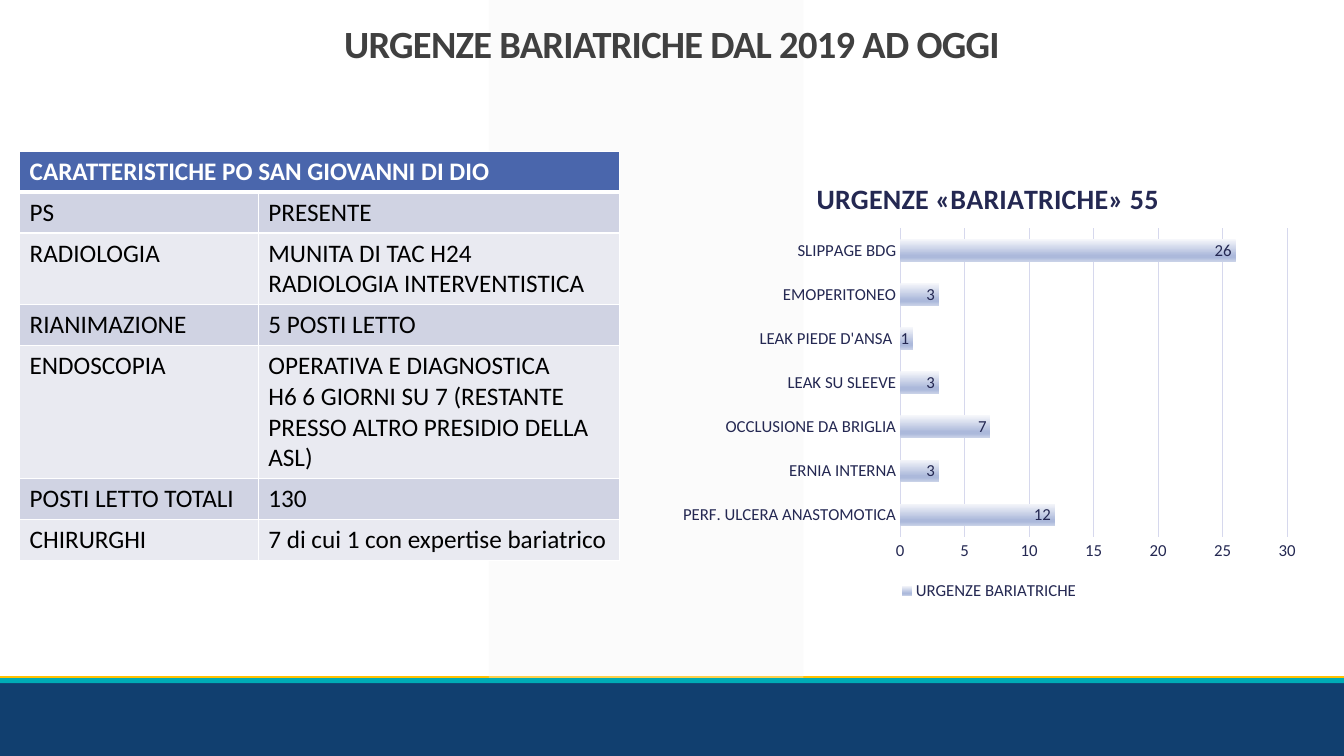
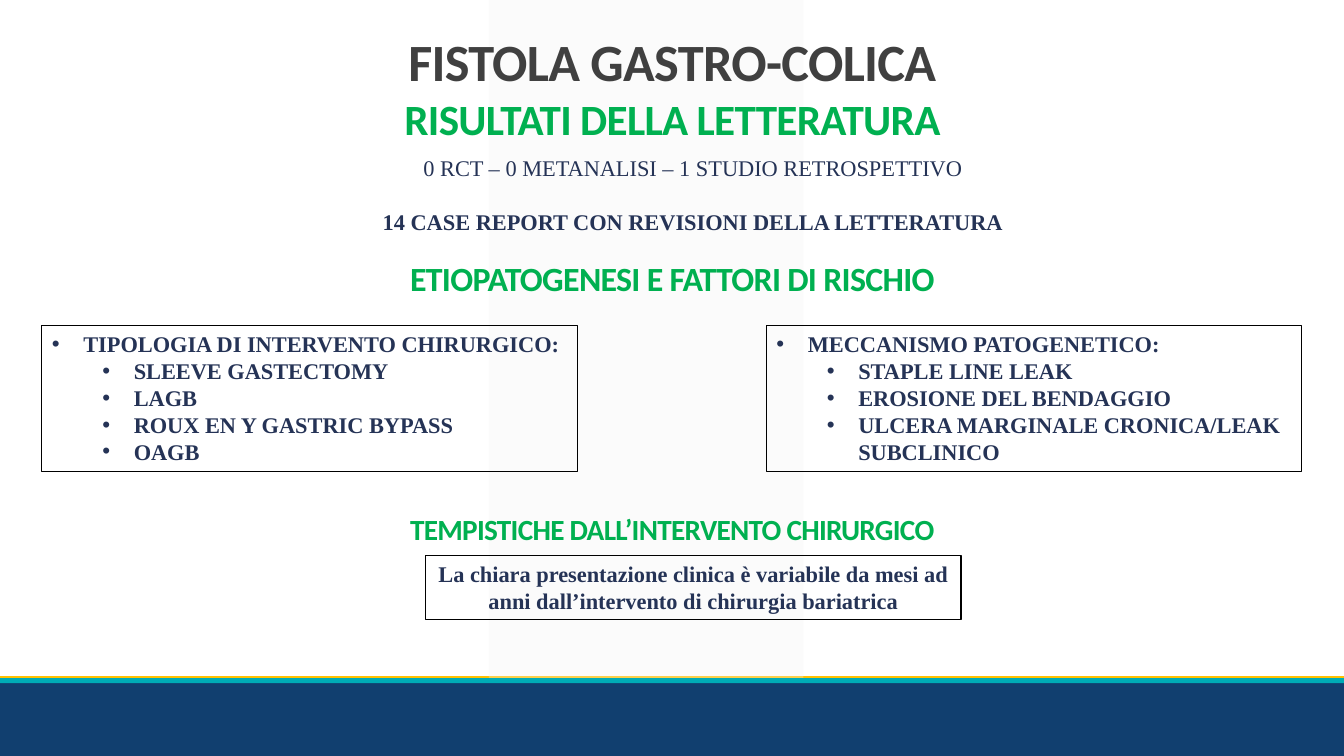
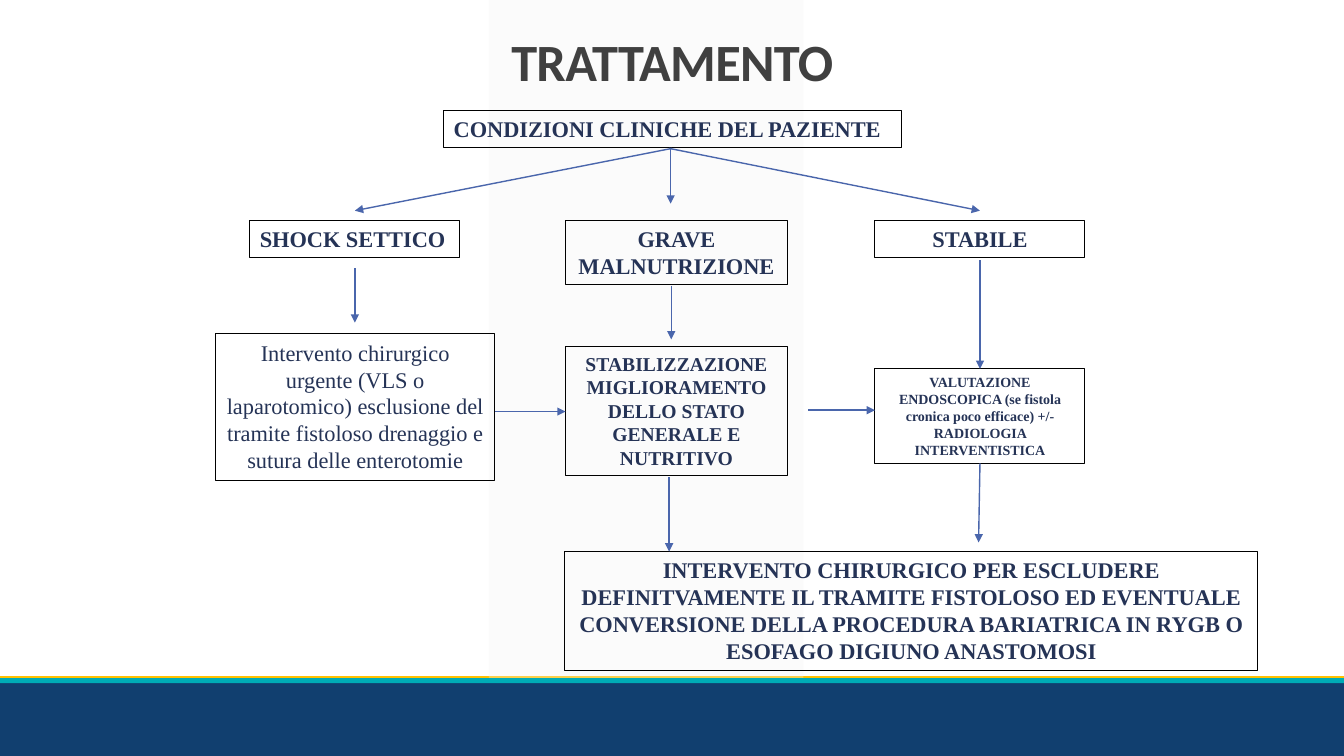
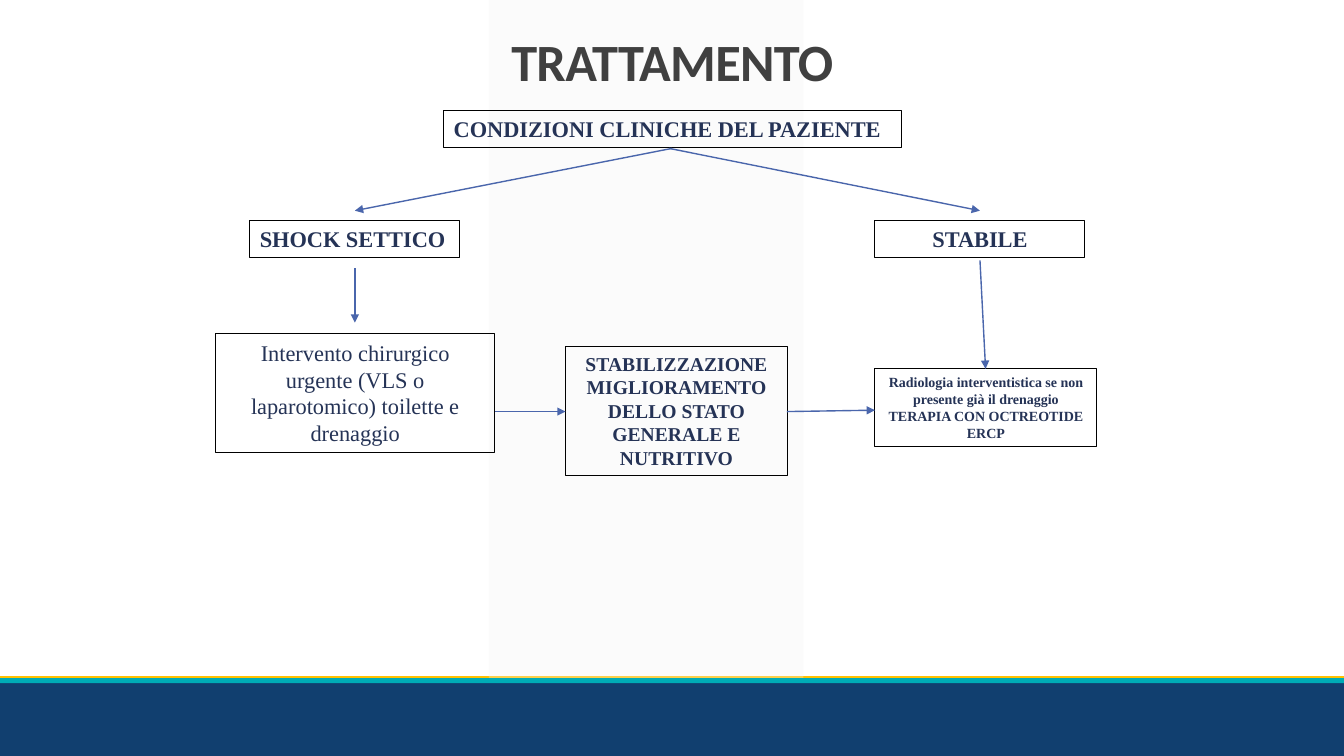
import functools
from dataclasses import dataclass

import lxml.etree
import pptx
import pptx.chart.data
import pptx.dml.color
import pptx.enum.chart
import pptx.enum.shapes
import pptx.enum.text
import pptx.oxml.ns
import pptx.util

Pt = pptx.util.Pt
qn = pptx.oxml.ns.qn
MID = pptx.enum.text.PP_ALIGN.CENTER
LEFT = pptx.enum.text.PP_ALIGN.LEFT
TOP = pptx.enum.text.MSO_ANCHOR.TOP
FIT = pptx.enum.text.MSO_AUTO_SIZE
RECT = pptx.enum.shapes.MSO_SHAPE.RECTANGLE
WIDE, HIGH = 960, 540


def hue(code):
    return pptx.dml.color.RGBColor.from_string(code)


@dataclass(frozen=True)
class Theme:
    sans: str = "Calibri"
    serif: str = "Times New Roman"
    dark: str = "404040"
    green: str = "00B050"
    ink: str = "253356"
    label: str = "242852"
    grid: str = "D6D8ED"
    blue: str = "4A66AC"
    navy: str = "113F6F"
    teal: str = "00ACB6"
    gold: str = "FFC000"
    panel: str = "F2F2F2"
    white: str = "FFFFFF"
    black: str = "000000"
    rows: tuple = ("E9EAF1", "D0D3E3")
    shade: tuple = ((0, "F6F7FB"), (74, "ACB9DB"), (83, "ACB9DB"), (100, "C8D1E7"))
    title: float = 37.4
    body: float = 16
    small: float = 14
    tiny: float = 10
    cell: float = 18
    chart: float = 12


THEME = Theme()


# Formats
def put(item, form):
    """Set each dotted attribute in form on item."""
    for key, val in form.items():
        *way, last = key.split(".")
        setattr(functools.reduce(getattr, way, item), last, val)


def font(name, size, code, bold=False):
    return {"name": name, "size": Pt(size), "bold": bold, "color.rgb": hue(code)}


def serif(size=THEME.body, bold=True):
    return font(THEME.serif, size, THEME.ink, bold)


def pts(*nums):
    return [Pt(num) for num in nums]


def node(home, tag, **vals):
    part = lxml.etree.SubElement(home, qn(tag))
    for key, val in vals.items():
        part.set(key, str(val))
    return part


# Text
def write(frame, lines, face, form):
    """Fill a text frame with one paragraph a line."""
    for num, line in enumerate(lines):
        para = frame.paragraphs[0] if num == 0 else frame.add_paragraph()
        put(para, form)
        run = para.add_run()
        run.text = line
        put(run.font, face)


def head(box, text, size, code):
    """Format a title or heading."""
    put(box.text_frame, {"word_wrap": True, "auto_size": FIT.NONE, "vertical_anchor": TOP})
    write(box.text_frame, [text], font(THEME.sans, size, code, True),
          {"alignment": MID, "line_spacing": 0.7})
    for part in box.element.iter(qn("a:rPr")):
        part.set("spc", "-50")


def start(deck, text, size=THEME.title, spot=(270, 29.5, 420.5, 43)):
    """Add a slide with its title."""
    slide = deck.slides.add_slide(deck.slide_layouts[5])
    title = slide.shapes.title
    put(title, dict(zip(("left", "top", "width", "height"), pts(*spot))))
    head(title, text, size, THEME.dark)
    return slide


def note(slide, lines, spot, face, align=MID, edge=True):
    """Add a text box, framed unless edge is off."""
    box = slide.shapes.add_textbox(*pts(*spot))
    put(box.text_frame, {"word_wrap": True, "auto_size": FIT.SHAPE_TO_FIT_TEXT})
    write(box.text_frame, lines, face, {"alignment": align})
    if edge:
        put(box.line, {"color.rgb": hue(THEME.black), "width": Pt(0.75)})
    return box


def points(slide, lines, spot):
    """Add a framed list: a lead point, then points one level down."""
    box = note(slide, lines, spot, serif(), LEFT)
    for num, para in enumerate(box.text_frame.paragraphs):
        para.level = min(num, 1)
        prop = para._p.get_or_add_pPr()
        prop.set("marL", str(Pt(22.5 + 36 * para.level)))
        prop.set("indent", str(-Pt(22.5)))
        node(prop, "a:buFont", typeface="Arial")
        node(prop, "a:buChar", char="•")


def arrow(slide, *ends):
    kind = pptx.enum.shapes.MSO_CONNECTOR.STRAIGHT
    link = slide.shapes.add_connector(kind, *pts(*ends))
    put(link.line, {"color.rgb": hue(THEME.blue), "width": Pt(1)})
    prop = link.element.spPr
    node(prop.find(qn("a:ln")), "a:tailEnd", type="triangle")
    node(prop, "a:effectLst")


# Shared bands, held by the master
def bands(deck, slide):
    tree = deck.slide_master.shapes.element
    for code, spot, alpha in (
        (THEME.gold, (0, 483, WIDE, 3.6), 100),
        (THEME.navy, (0, 486, WIDE, HIGH - 486), 100),
        (THEME.panel, (349.2, 0, 224.6, 486), 30),
        (THEME.teal, (0, 484.4, WIDE, 3.6), 100),
    ):
        band = slide.shapes.add_shape(RECT, *pts(*spot))
        band.shadow.inherit = False
        band.fill.solid()
        band.fill.fore_color.rgb = hue(code)
        band.line.fill.background()
        if alpha < 100:
            tint = band.element.spPr.find(".//" + qn("a:srgbClr"))
            node(tint, "a:alpha", val=alpha * 1000)
        tree.append(band.element)


# Table
def grid(slide, top, rows, spot, cols, high):
    """Add a table with a merged header row."""
    frame = slide.shapes.add_table(len(rows) + 1, len(cols), *pts(*spot))
    table = frame.table
    for col, wide in zip(table.columns, cols):
        col.width = Pt(wide)
    for num, line in enumerate([(top, ""), *rows]):
        table.rows[num].height = Pt(high)
        code = THEME.rows[num % 2] if num else THEME.blue
        face = font(THEME.sans, THEME.cell, THEME.black if num else THEME.white, num == 0)
        for cell, text in zip(table.rows[num].cells, line):
            cell.fill.solid()
            cell.fill.fore_color.rgb = hue(code)
            if text:
                write(cell.text_frame, text.split("\n"), face, {})
    table.cell(0, 0).merge(table.cell(0, len(cols) - 1))
    for num, prop in enumerate(frame.element.iter(qn("a:tcPr"))):
        row = num // len(cols)
        for place, side in enumerate("LRTB"):
            thick = 3 if (row, side) in ((0, "B"), (1, "T")) else 1
            edge = node(prop, "a:ln" + side, w=Pt(thick))
            node(node(edge, "a:solidFill"), "a:srgbClr", val=THEME.white)
            prop.insert(place, edge)


# Chart
def layout(part, inner=False, **spot):
    """Fix where a chart part stands, in shares of the chart."""
    home = part.find(qn("c:layout"))
    if home is None:
        home = node(part, "c:layout")
        part.insert(0, home)
    hand = node(home, "c:manualLayout")
    if inner:
        node(hand, "c:layoutTarget", val="inner")
    for key in ("xMode", "yMode"):
        node(hand, "c:" + key, val="edge")
    for key, val in spot.items():
        node(hand, "c:" + key, val=val)


def bars(slide, title, name, pairs, spot):
    enums = pptx.enum.chart
    data = pptx.chart.data.CategoryChartData()
    data.categories = [cat for cat, val in pairs]
    data.add_series(name, [val for cat, val in pairs])
    chart = slide.shapes.add_chart(
        enums.XL_CHART_TYPE.BAR_CLUSTERED, *pts(*spot), data).chart
    face = font(THEME.sans, THEME.chart, THEME.label)
    put(chart.font, face)
    write(chart.chart_title.text_frame, [title],
          font(THEME.sans, 20, THEME.label, True), {})
    put(chart, {"has_legend": True,
                "legend.position": enums.XL_LEGEND_POSITION.BOTTOM,
                "legend.include_in_layout": False})
    # Axes
    none = enums.XL_TICK_MARK.NONE
    for axis in (chart.category_axis, chart.value_axis):
        put(axis, {"major_tick_mark": none, "minor_tick_mark": none})
        put(axis.tick_labels.font, face)
    thin = {"color.rgb": hue(THEME.grid), "width": Pt(0.75)}
    put(chart.category_axis.format.line, thin)
    put(chart.value_axis, {"minimum_scale": 0, "maximum_scale": 30, "major_unit": 5})
    put(chart.value_axis.major_gridlines.format.line, thin)
    chart.value_axis.format.line.fill.background()
    # Bars and labels
    plot = chart.plots[0]
    put(plot, {"gap_width": 100, "vary_by_categories": False})
    row = plot.series[0]
    row.format.fill.gradient()
    row.format.fill.gradient_angle = 270
    stops = chart.element.find(".//" + qn("a:gsLst"))
    for old in list(stops):
        stops.remove(old)
    for share, code in THEME.shade:
        node(node(stops, "a:gs", pos=share * 1000), "a:srgbClr", val=code)
    put(row.data_labels, {"show_value": True,
                          "position": enums.XL_LABEL_POSITION.INSIDE_END})
    put(row.data_labels.font, face)
    layout(chart.element.find(".//" + qn("c:title")), x=0.22, y=0.05)
    layout(chart.element.find(".//" + qn("c:plotArea")), True,
           x=0.36, y=0.17, w=0.61, h=0.68)


# Parts shared by both treatment slides
def care(deck, urgent, tall):
    slide = start(deck, "TRATTAMENTO")
    for text, spot, face, align in (
        ("CONDIZIONI CLINICHE DEL PAZIENTE", (317, 79, 327, 26.5), serif(), LEFT),
        ("SHOCK SETTICO", (178.5, 157.5, 150, 26.5), serif(), LEFT),
        ("STABILE", (625, 157.5, 150, 26.5), serif(), MID),
        (urgent, (154, 238.5, 199.5, tall), serif(bold=False), MID),
        ("STABILIZZAZIONE\nMIGLIORAMENTO DELLO STATO GENERALE E NUTRITIVO",
         (404, 247.5, 158.5, 92), serif(THEME.small), MID),
    ):
        note(slide, text.split("\n"), spot, face, align)
    for ends in ((480, 106, 253.5, 150.5), (478, 106, 700, 150.5),
                 (253.5, 191.5, 253.5, 230.5), (353.5, 294, 404, 294)):
        arrow(slide, *ends)
    return slide


# Slides
def cases(deck):
    slide = start(deck, "URGENZE BARIATRICHE DAL 2019 AD OGGI", 27.5, (209, 20, 542, 53))
    bands(deck, slide)
    bars(slide, "URGENZE «BARIATRICHE» 55", "URGENZE BARIATRICHE", (
        ("PERF. ULCERA ANASTOMOTICA", 12),
        ("ERNIA INTERNA", 3),
        ("OCCLUSIONE DA BRIGLIA", 7),
        ("LEAK SU SLEEVE", 3),
        ("LEAK PIEDE D'ANSA ", 1),
        ("EMOPERITONEO", 3),
        ("SLIPPAGE BDG", 26),
    ), (480, 108, 453, 324))
    grid(slide, "CARATTERISTICHE PO SAN GIOVANNI DI DIO", (
        ("PS", "PRESENTE"),
        ("RADIOLOGIA", "MUNITA DI TAC H24\nRADIOLOGIA INTERVENTISTICA"),
        ("RIANIMAZIONE", "5 POSTI LETTO"),
        ("ENDOSCOPIA", "OPERATIVA E DIAGNOSTICA\n"
         "H6 6 GIORNI SU 7 (RESTANTE PRESSO ALTRO PRESIDIO DELLA ASL)"),
        ("POSTI LETTO TOTALI", "130"),
        ("CHIRURGHI", "7 di cui 1 con expertise bariatrico"),
    ), (14, 108, 428.5, 290), (170.5, 258), 29.2)


def review(deck):
    slide = start(deck, "FISTOLA GASTRO-COLICA")
    for text, top, size in (
        ("RISULTATI DELLA LETTERATURA", 72.7, 30.8),
        ("ETIOPATOGENESI E FATTORI DI RISCHIO", 188.6, 24.2),
        ("TEMPISTICHE DALL’INTERVENTO CHIRURGICO", 368.6, 20.9),
    ):
        box = slide.shapes.add_textbox(*pts(270, top, 420.5, 28))
        head(box, text, size, THEME.green)
    found = note(slide, ["0 RCT – 0 METANALISI – 1 STUDIO RETROSPETTIVO",
                         "14 CASE REPORT CON REVISIONI DELLA LETTERATURA"],
                 (30, 106.5, 930, 65.5), serif(bold=False), edge=False)
    last = found.text_frame.paragraphs[1]
    last.space_before = Pt(19.2)
    last.runs[0].font.bold = True
    points(slide, ["TIPOLOGIA DI INTERVENTO CHIRURGICO:", "SLEEVE GASTECTOMY", "LAGB",
                   "ROUX EN Y GASTRIC BYPASS", "OAGB"], (30, 232.5, 382.5, 104.5))
    points(slide, ["MECCANISMO PATOGENETICO:", "STAPLE LINE LEAK",
                   "EROSIONE DEL BENDAGGIO", "ULCERA MARGINALE CRONICA/LEAK SUBCLINICO"],
           (547.5, 232.5, 382.5, 104.5))
    note(slide, ["La chiara presentazione clinica è variabile da mesi ad anni "
                 "dall’intervento di chirurgia bariatrica"],
         (304, 396.5, 382.5, 46), serif())


def late(deck):
    slide = care(deck, "Intervento chirurgico urgente (VLS o laparotomico) esclusione del "
                 "tramite fistoloso drenaggio e sutura delle enterotomie", 104.5)
    note(slide, ["GRAVE MALNUTRIZIONE"], (404, 157.5, 158.5, 46), serif())
    note(slide, ["VALUTAZIONE ENDOSCOPICA (se fistola cronica poco efficace) +/- "
                 "RADIOLOGIA INTERVENTISTICA"], (625, 263.5, 150, 67.5), serif(THEME.tiny))
    note(slide, ["INTERVENTO CHIRURGICO PER ESCLUDERE DEFINITVAMENTE IL TRAMITE FISTOLOSO "
                 "ED EVENTUALE CONVERSIONE DELLA PROCEDURA BARIATRICA IN RYGB O "
                 "ESOFAGO DIGIUNO ANASTOMOSI"], (403.5, 394, 495, 85), serif())
    for ends in ((479, 106, 479, 145.5), (479.5, 204, 479.5, 242.5),
                 (700, 186, 700, 263.5), (577.5, 293, 625, 293),
                 (700, 331, 699, 387.5), (478, 341, 478, 394)):
        arrow(slide, *ends)


def early(deck):
    slide = care(deck, "Intervento chirurgico urgente (VLS o laparotomico) toilette e "
                 "drenaggio", 85)
    note(slide, ["Radiologia interventistica se non presente già il drenaggio",
                 "TERAPIA CON OCTREOTIDE", "ERCP"],
         (625, 263.5, 158.5, 55.5), serif(THEME.tiny))
    for ends in ((700, 186, 704, 263.5), (562, 294, 625, 293)):
        arrow(slide, *ends)


def main():
    deck = pptx.Presentation()
    put(deck, {"slide_width": Pt(WIDE), "slide_height": Pt(HIGH)})
    for build in (cases, review, late, early):
        build(deck)
    deck.save("out.pptx")


if __name__ == "__main__":
    main()
